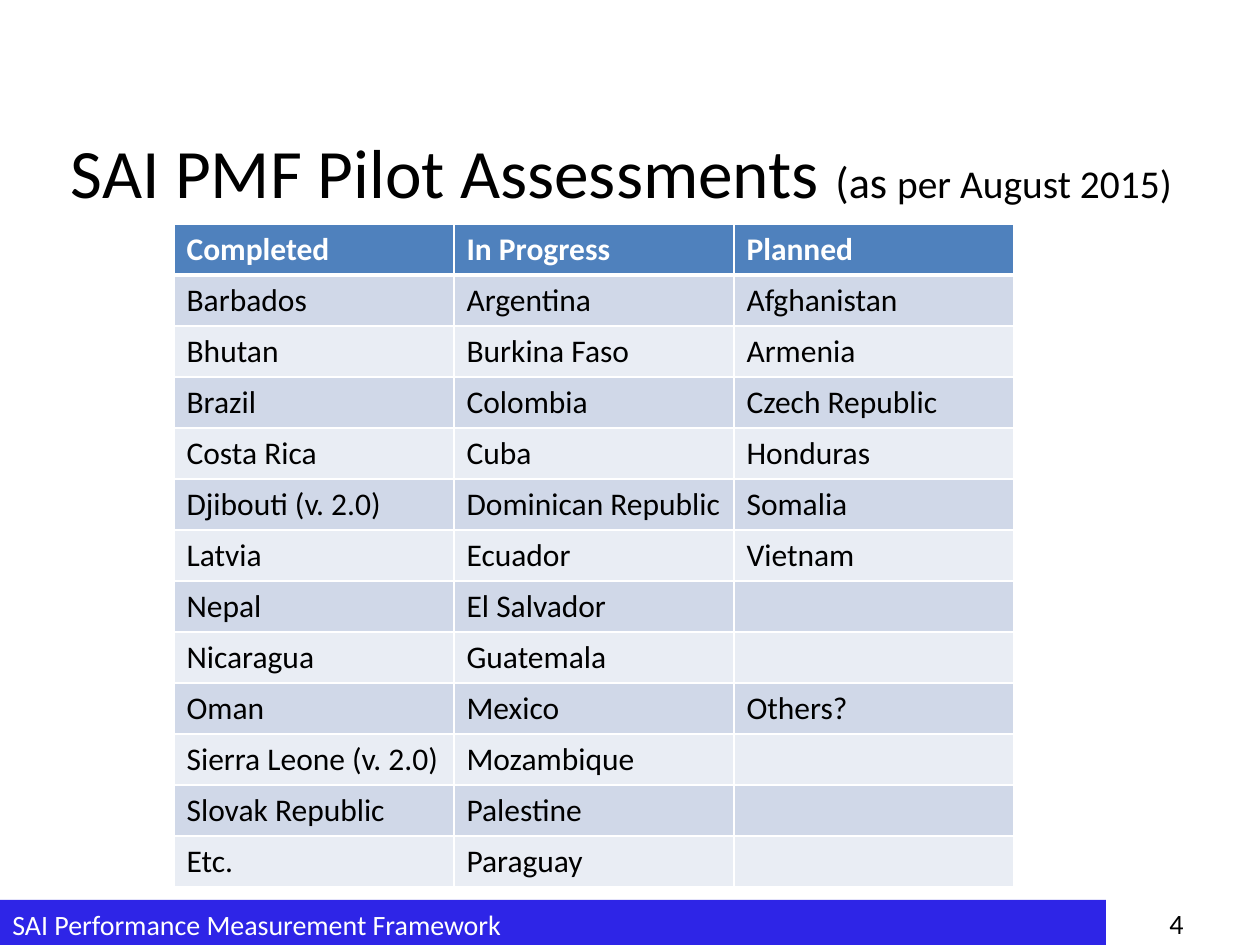
from lxml import etree
from pptx import Presentation
from pptx.dml.color import RGBColor
from pptx.enum.shapes import MSO_SHAPE
from pptx.enum.text import MSO_ANCHOR, PP_ALIGN
from pptx.oxml.ns import qn
from pptx.util import Emu, Pt

RECT = MSO_SHAPE.RECTANGLE
TOP, MIDDLE = MSO_ANCHOR.TOP, MSO_ANCHOR.MIDDLE
LEFT, CENTER, RIGHT = PP_ALIGN.LEFT, PP_ALIGN.CENTER, PP_ALIGN.RIGHT

FONT = "Calibri"
COLORS = {
    "white": "FFFFFF",
    "black": "000000",
    "footer": "2E25E7",
    "head": "4F81BD",
    "odd": "D0D8E8",
    "even": "E9EDF4",
}
HEADS = ["Completed", "In Progress", "Planned"]
ROWS = [
    ["Barbados", "Argentina", "Afghanistan"],
    ["Bhutan", "Burkina Faso", "Armenia"],
    ["Brazil", "Colombia", "Czech Republic"],
    ["Costa Rica", "Cuba", "Honduras"],
    ["Djibouti (v. 2.0)", "Dominican Republic", "Somalia"],
    ["Latvia", "Ecuador", "Vietnam"],
    ["Nepal", "El Salvador", ""],
    ["Nicaragua", "Guatemala", ""],
    ["Oman", "Mexico", "Others?"],
    ["Sierra Leone (v. 2.0)", "Mozambique", ""],
    ["Slovak Republic", "Palestine", ""],
    ["Etc.", "Paraguay", ""],
]


def px(count):
    return Emu(round(count * 914400 / 126))


def color(name):
    return RGBColor.from_string(COLORS[name])


def style(font, size, ink, bold=False):
    font.name = FONT
    font.size = Pt(size)
    font.bold = bold
    font.color.rgb = color(ink)


def write(shape, runs, ink, align, anchor):
    """Fill a shape with one paragraph of (text, size) runs."""
    frame = shape.text_frame
    frame.word_wrap = True
    frame.vertical_anchor = anchor
    para = frame.paragraphs[0]
    para.alignment = align
    style(para.font, runs[0][1], ink)
    for text, size in runs:
        run = para.add_run()
        run.text = text
        if len(runs) > 1:
            style(run.font, size, ink)


def add_text(slide, box, runs, ink, align, anchor):
    shape = slide.shapes.add_textbox(*map(px, box))
    write(shape, runs, ink, align, anchor)


def add_bar(slide, box, fill, runs):
    bar = slide.shapes.add_shape(RECT, *map(px, box))
    bar.shadow.inherit = False
    bar.fill.solid()
    bar.fill.fore_color.rgb = color(fill)
    bar.line.fill.background()
    write(bar, runs, "white", LEFT, MIDDLE)


def add_edge(cell, side, width):
    props = cell._tc.get_or_add_tcPr()
    line = etree.SubElement(props, qn(f"a:ln{side}"), w=str(Pt(width)))
    fill = etree.SubElement(line, qn("a:solidFill"))
    etree.SubElement(fill, qn("a:srgbClr"), val=COLORS["white"])


def fill_cell(cell, text, row):
    # Borders come before the fill; the rule under the header is thicker
    edges = {"L": 1, "R": 1, "T": 3 if row == 1 else 1, "B": 3 if row == 0 else 1}
    for side, width in edges.items():
        add_edge(cell, side, width)
    cell.fill.solid()
    band = "head" if row == 0 else "odd" if row % 2 else "even"
    cell.fill.fore_color.rgb = color(band)
    cell.text = text
    ink = "white" if row == 0 else "black"
    style(cell.text_frame.paragraphs[0].font, 18, ink, bold=row == 0)


def add_grid(slide, left, top, wide, high, data):
    rows, cols = len(data), len(data[0])
    box = (left, top, wide * cols, high * rows)
    table = slide.shapes.add_table(rows, cols, *map(px, box)).table
    for row, texts in enumerate(data):
        for col, text in enumerate(texts):
            fill_cell(table.cell(row, col), text, row)


def main():
    deck = Presentation()
    deck.slide_width, deck.slide_height = px(1260), px(945)
    slide = deck.slides.add_slide(deck.slide_layouts[6])

    # Footer and page number
    add_bar(slide, (0, 900, 1106, 49), "footer",
            [("SAI Performance Measurement Framework", 16)])
    add_text(slide, (1106, 900, 90, 45), [("4", 16)], "black", RIGHT, TOP)

    # Title
    title = [("SAI PMF Pilot Assessments ", 39.6), ("(as ", 25.2),
             ("per August 2015)", 22.5)]
    add_text(slide, (35, 131, 1173, 79), title, "black", CENTER, MIDDLE)

    # Assessment status by country
    add_grid(slide, 174, 224, 280, 51, [HEADS] + ROWS)

    deck.save("out.pptx")


if __name__ == "__main__":
    main()
